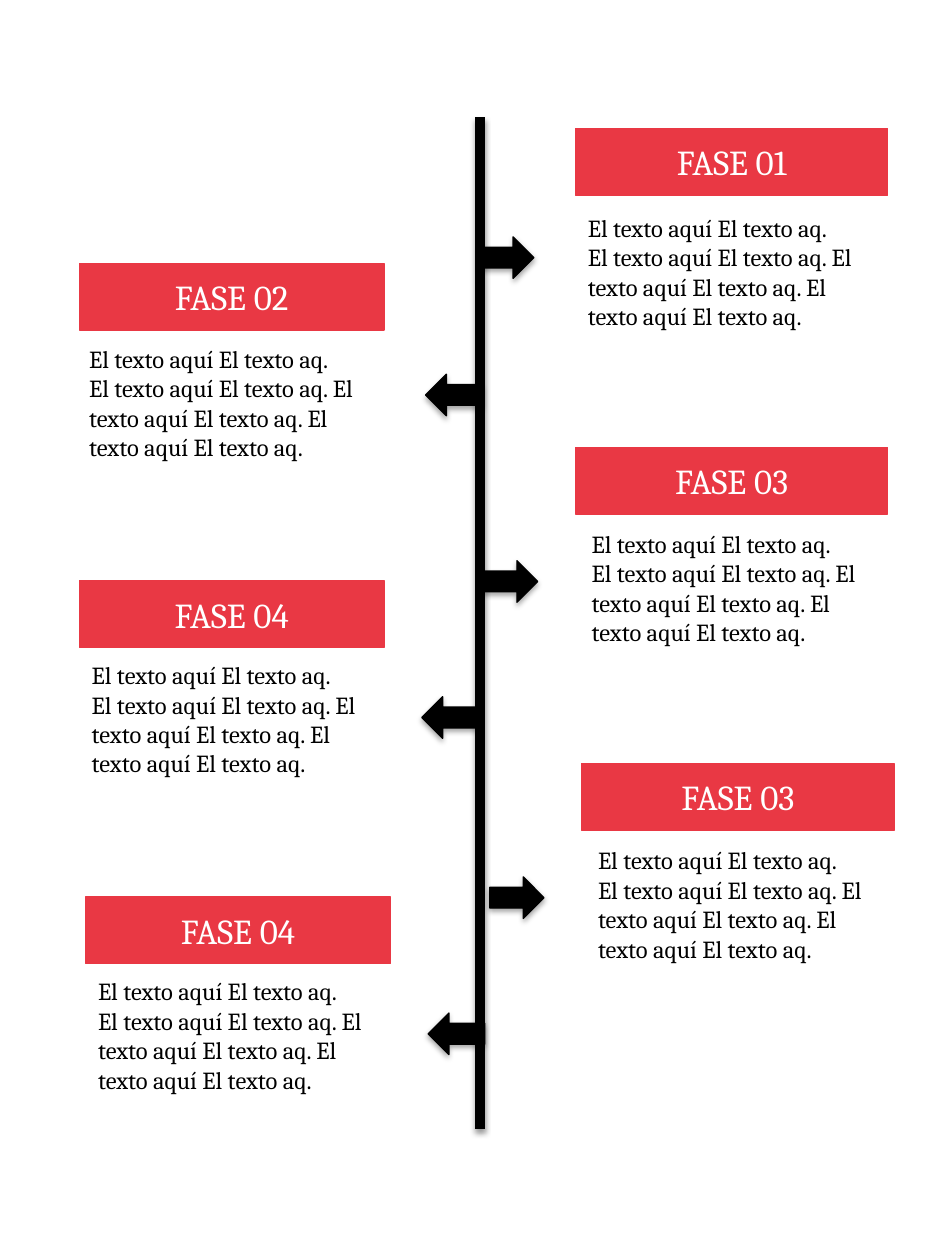
import dataclasses

import pptx
import pptx.dml.color
import pptx.enum.shapes
import pptx.enum.text
import pptx.util

PX = 9144  # EMU; 100 px to the inch
SHAPES = pptx.enum.shapes.MSO_SHAPE
ALIGN = pptx.enum.text.PP_ALIGN


@dataclasses.dataclass(frozen=True)
class Theme:
    font: str = "Cambria"
    heading_size: int = 20
    body_size: int = 14
    axis_width: int = 6
    outline_width: float = 0.75
    red: str = "E93844"
    black: str = "000000"
    white: str = "FFFFFF"


@dataclasses.dataclass(frozen=True)
class Phase:
    """Heading position in px, with the body and arrow offsets from it."""
    title: str
    left: int
    top: int
    body_offset: tuple
    arrow_offset: tuple
    on_right: bool


THEME = Theme()
BODY = (
    "El texto aquí El texto aq.",
    "El texto aquí El texto aq. El texto aquí El texto aq. El texto aquí El texto aq.",
)
PHASES = (
    Phase("FASE 01", 457, 102, (0, 62), (-76, 86), True),
    Phase("FASE 02", 63, 209, (-2, 59), (275, 88), False),
    Phase("FASE 03", 457, 355, (3, 60), (-73, 90), True),
    Phase("FASE 04", 63, 461, (0, 58), (272, 92), False),
    Phase("FASE 03", 462, 606, (3, 60), (-73, 90), True),
    Phase("FASE 04", 68, 712, (0, 58), (272, 92), False),
)


def px(*lengths):
    return [length * PX for length in lengths]


def color(value):
    return pptx.dml.color.RGBColor.from_string(value)


def write_text(shape, *lines, size, fill, align=ALIGN.LEFT):
    frame = shape.text_frame
    frame.word_wrap = True
    for index, line in enumerate(lines):
        paragraph = frame.add_paragraph() if index else frame.paragraphs[0]
        paragraph.alignment = align
        run = paragraph.add_run()
        run.text = line
        run.font.name = THEME.font
        run.font.size = pptx.util.Pt(size)
        run.font.color.rgb = color(fill)


def add_solid_shape(slide, kind, box, fill):
    shape = slide.shapes.add_shape(kind, *px(*box))
    shape.fill.solid()
    shape.fill.fore_color.rgb = color(fill)
    shape.line.color.rgb = color(fill)
    shape.line.width = pptx.util.Pt(THEME.outline_width)
    return shape


def add_axis(slide, x, top, bottom):
    """Draw the central line, which keeps the default theme shadow."""
    axis = slide.shapes.add_connector(
        pptx.enum.shapes.MSO_CONNECTOR.STRAIGHT, *px(x, top, x, bottom))
    axis.line.color.rgb = color(THEME.black)
    axis.line.width = pptx.util.Pt(THEME.axis_width)


def add_heading(slide, box, title):
    heading = add_solid_shape(slide, SHAPES.RECTANGLE, box, THEME.red)
    heading.shadow.inherit = False
    heading.text_frame.vertical_anchor = pptx.enum.text.MSO_ANCHOR.MIDDLE
    write_text(heading, title, size=THEME.heading_size, fill=THEME.white,
               align=ALIGN.CENTER)


def add_body(slide, box):
    body = slide.shapes.add_textbox(*px(*box))
    write_text(body, *BODY, size=THEME.body_size, fill=THEME.black)
    body.text_frame.auto_size = pptx.enum.text.MSO_AUTO_SIZE.SHAPE_TO_FIT_TEXT


def add_arrow(slide, box, points_right):
    """Draw an arrow, which keeps the default theme shadow."""
    arrow = add_solid_shape(slide, SHAPES.RIGHT_ARROW, box, THEME.black)
    if not points_right:
        arrow._element.spPr.xfrm.set("flipH", "1")


def add_phase(slide, phase):
    def place(offset, width, height):
        return phase.left + offset[0], phase.top + offset[1], width, height

    add_heading(slide, place((0, 0), 248 if phase.on_right else 242, 53),
                phase.title)
    add_body(slide, place(phase.body_offset, 248, 104))
    add_arrow(slide, place(phase.arrow_offset, 43 if phase.on_right else 45, 33),
              phase.on_right)


def main():
    presentation = pptx.Presentation()
    presentation.slide_width, presentation.slide_height = px(748, 1000)
    slide = presentation.slides.add_slide(presentation.slide_layouts[6])
    slide.background.fill.solid()
    slide.background.fill.fore_color.rgb = color(THEME.white)
    add_axis(slide, 381, 93, 896)
    for phase in PHASES:
        add_phase(slide, phase)
    presentation.save("out.pptx")


if __name__ == "__main__":
    main()
